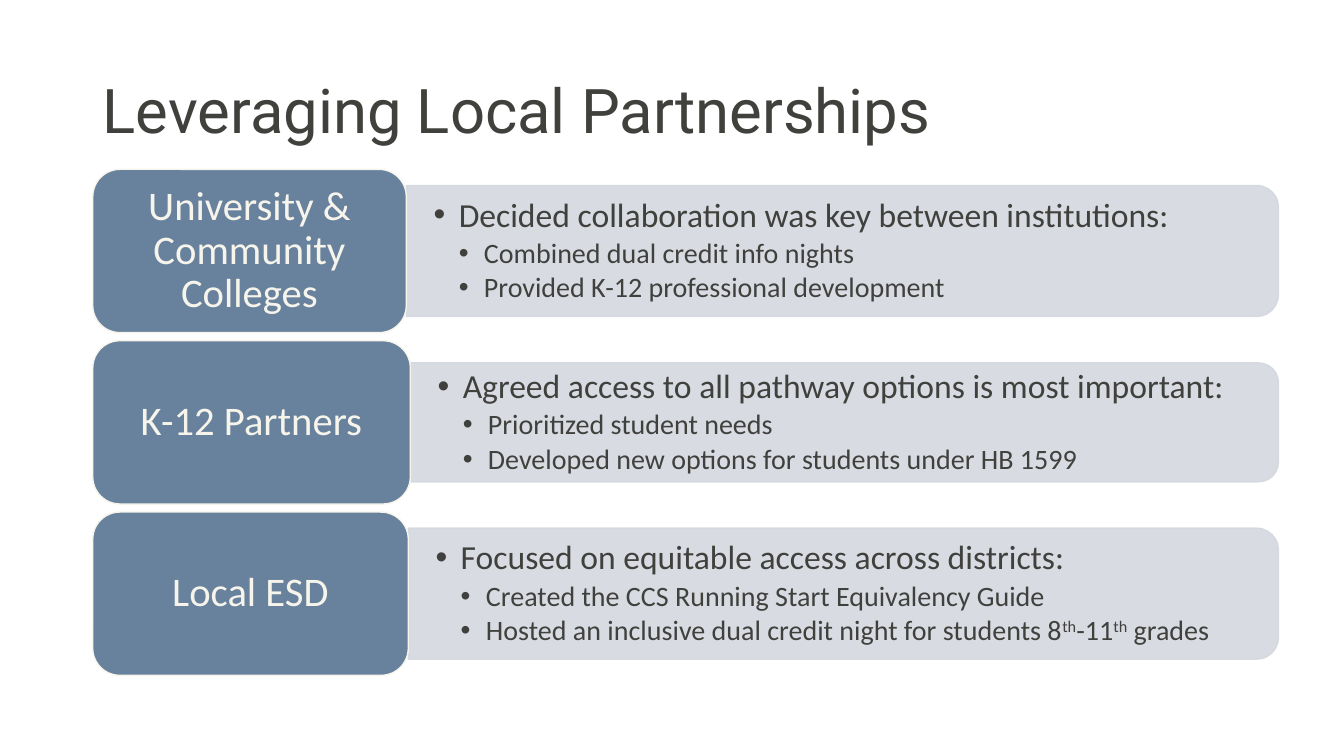
from lxml import etree
from pptx import Presentation
from pptx import util as u
from pptx.dml.color import RGBColor
from pptx.enum import shapes, text
from pptx.oxml.ns import qn

INK, CREAM, BLUE, GREY = "40403D", "F7F5EB", "68829E", "D4D8DF"
LEFT, RIGHT, TOP, PITCH, LABEL_H = 0.92, 12.68, 1.68, 1.7, 1.62

ROWS = [
    ("University & Community Colleges", 3.11, 1.3,
     ["Decided collaboration was key between institutions:",
      "Combined dual credit info nights",
      "Provided K-12 professional development"]),
    ("K-12 Partners", 3.15, 1.18,
     ["Agreed access to all pathway options is most important:",
      "Prioritized student needs",
      "Developed new options for students under HB 1599"]),
    ("Local ESD", 3.13, 1.3,
     ["Focused on equitable access across districts:",
      "Created the CCS Running Start Equivalency Guide",
      "Hosted an inclusive dual credit night for students 8^th^-11^th^ grades"]),
]


def rgb(color):
    return RGBColor.from_string(color)


def set_frame(tf, dx=0.1, dy=0.05):
    tf.word_wrap = True
    tf.auto_size = text.MSO_AUTO_SIZE.NONE
    tf.vertical_anchor = text.MSO_ANCHOR.MIDDLE
    tf.margin_left = tf.margin_right = u.Inches(dx)
    tf.margin_top = tf.margin_bottom = u.Inches(dy)


def write(p, content, size, color, font="Calibri", align=text.PP_ALIGN.LEFT,
          after=0, indent=None):
    if indent is not None:
        pPr = p._p.get_or_add_pPr()
        pPr.set("marL", str(u.Inches(indent)))
        pPr.set("indent", str(-u.Inches(0.25)))
        etree.SubElement(pPr, qn("a:buFont"), typeface="Arial")
        etree.SubElement(pPr, qn("a:buChar"), char="•")
    p.alignment = align
    p.line_spacing = 0.9
    p.space_before = u.Pt(0)
    p.space_after = u.Pt(after)
    for i, part in enumerate(content.split("^")):
        r = p.add_run()
        r.text = part
        r.font.size = u.Pt(size)
        r.font.name = font
        r.font.color.rgb = rgb(color)
        if i % 2:
            r.font._element.set("baseline", "30000")


def add_block(s, kind, x, y, w, h, fill, line, alpha=None):
    sp = s.shapes.add_shape(kind, u.Inches(x), u.Inches(y), u.Inches(w), u.Inches(h))
    sp.shadow.inherit = False
    sp.fill.solid()
    sp.fill.fore_color.rgb = rgb(fill)
    sp.line.color.rgb = rgb(line)
    sp.line.width = u.Pt(1)
    if alpha:
        for clr in sp._element.spPr.iter(qn("a:srgbClr")):
            etree.SubElement(clr, qn("a:alpha"), val=str(alpha * 1000))
    return sp


def add_panel(s, x, middle, h, points):
    w = RIGHT - x
    sp = add_block(s, shapes.MSO_SHAPE.ROUND_2_SAME_RECTANGLE,
                   x + (w - h) / 2, middle - w / 2, h, w, GREY, GREY, alpha=90)
    sp.rotation = 90
    box_h = h - 0.13
    tb = s.shapes.add_textbox(u.Inches(x), u.Inches(middle - box_h / 2),
                              u.Inches(w - 0.07), u.Inches(box_h))
    tf = tb.text_frame
    set_frame(tf, 0.27, 0.14)
    for i, point in enumerate(points):
        p = tf.add_paragraph() if i else tf.paragraphs[0]
        size = 20 if i else 24
        write(p, point, size, INK, after=size * 0.15, indent=0.5 if i else 0.25)


def add_label(s, y, w, label):
    sp = add_block(s, shapes.MSO_SHAPE.ROUNDED_RECTANGLE, LEFT, y, w, LABEL_H, BLUE, CREAM)
    set_frame(sp.text_frame, 0.2, 0.14)
    write(sp.text_frame.paragraphs[0], label, 29, CREAM, align=text.PP_ALIGN.CENTER)


def add_title(s, content):
    sp = s.shapes.title
    sp.left, sp.top = u.Inches(LEFT), u.Inches(0.4)
    sp.width, sp.height = u.Inches(11.5), u.Inches(1.45)
    set_frame(sp.text_frame)
    write(sp.text_frame.paragraphs[0], content, 44, INK, font="Roboto")


def main():
    prs = Presentation()
    prs.slide_width, prs.slide_height = u.Inches(13.33), u.Inches(7.5)
    s = prs.slides.add_slide(prs.slide_layouts[5])
    add_title(s, "Leveraging Local Partnerships")
    for i, (label, label_w, panel_h, points) in enumerate(ROWS):
        y = TOP + i * PITCH
        add_panel(s, LEFT + label_w, y + LABEL_H / 2, panel_h, points)
        add_label(s, y, label_w, label)
    prs.save("out.pptx")


if __name__ == "__main__":
    main()
